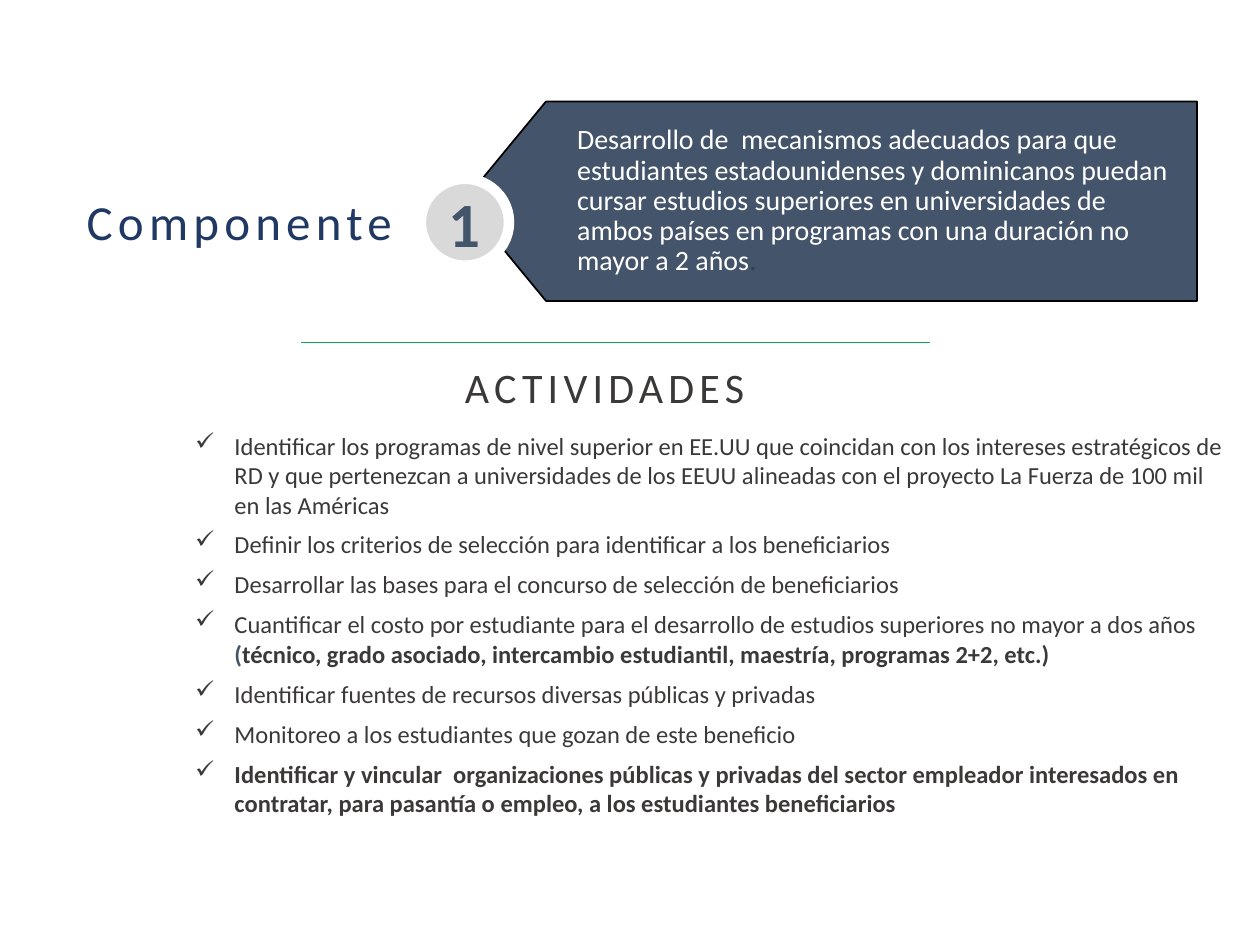
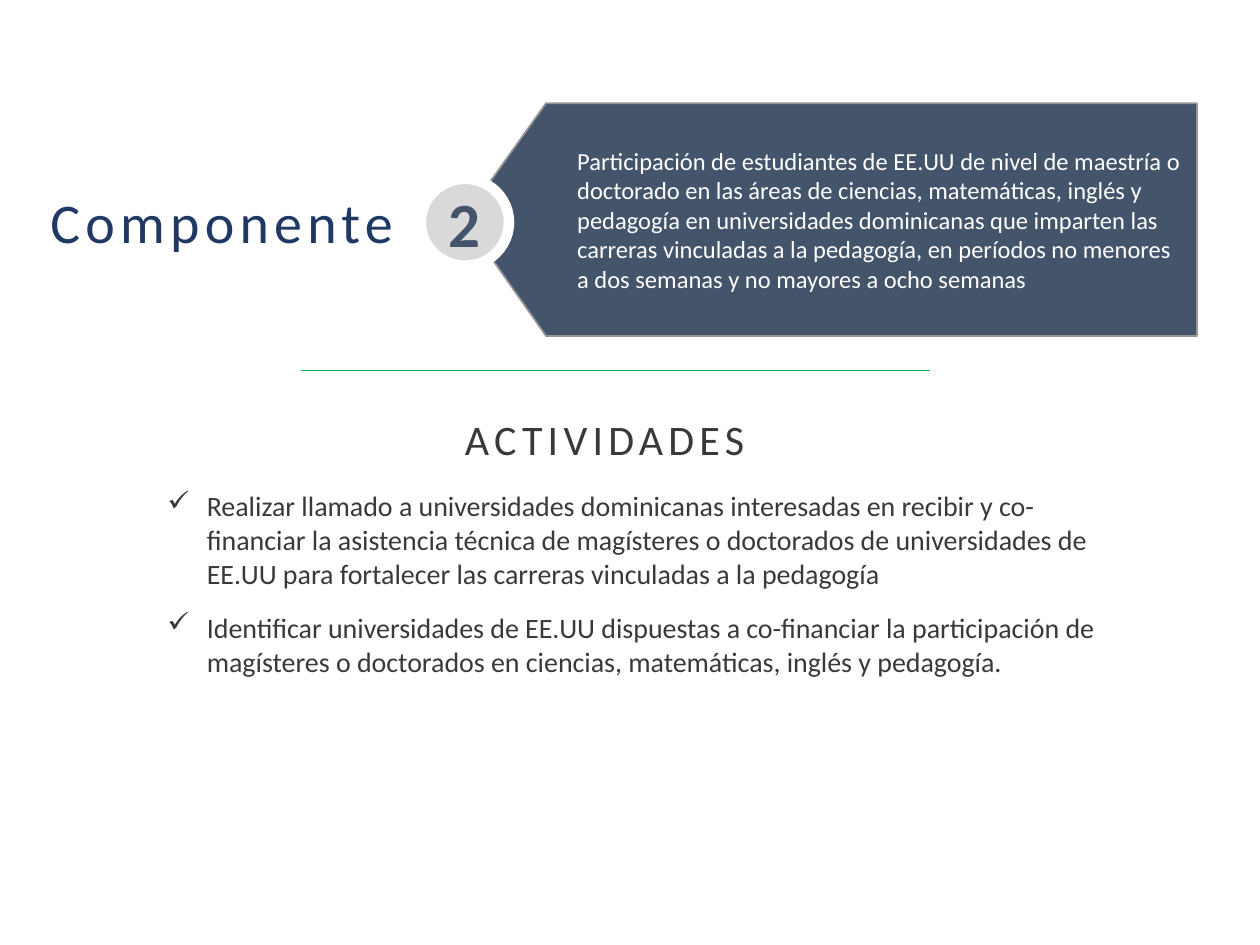
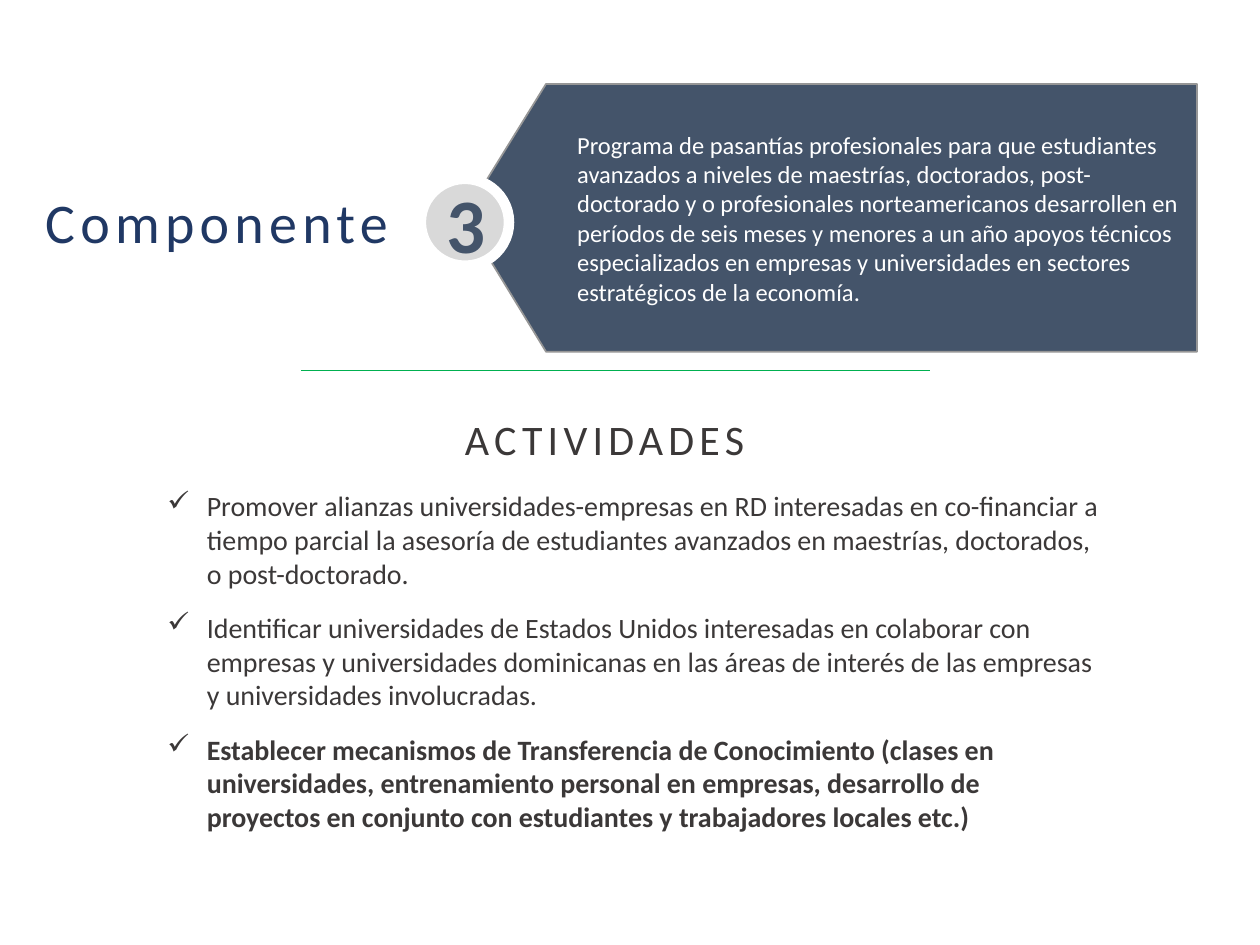
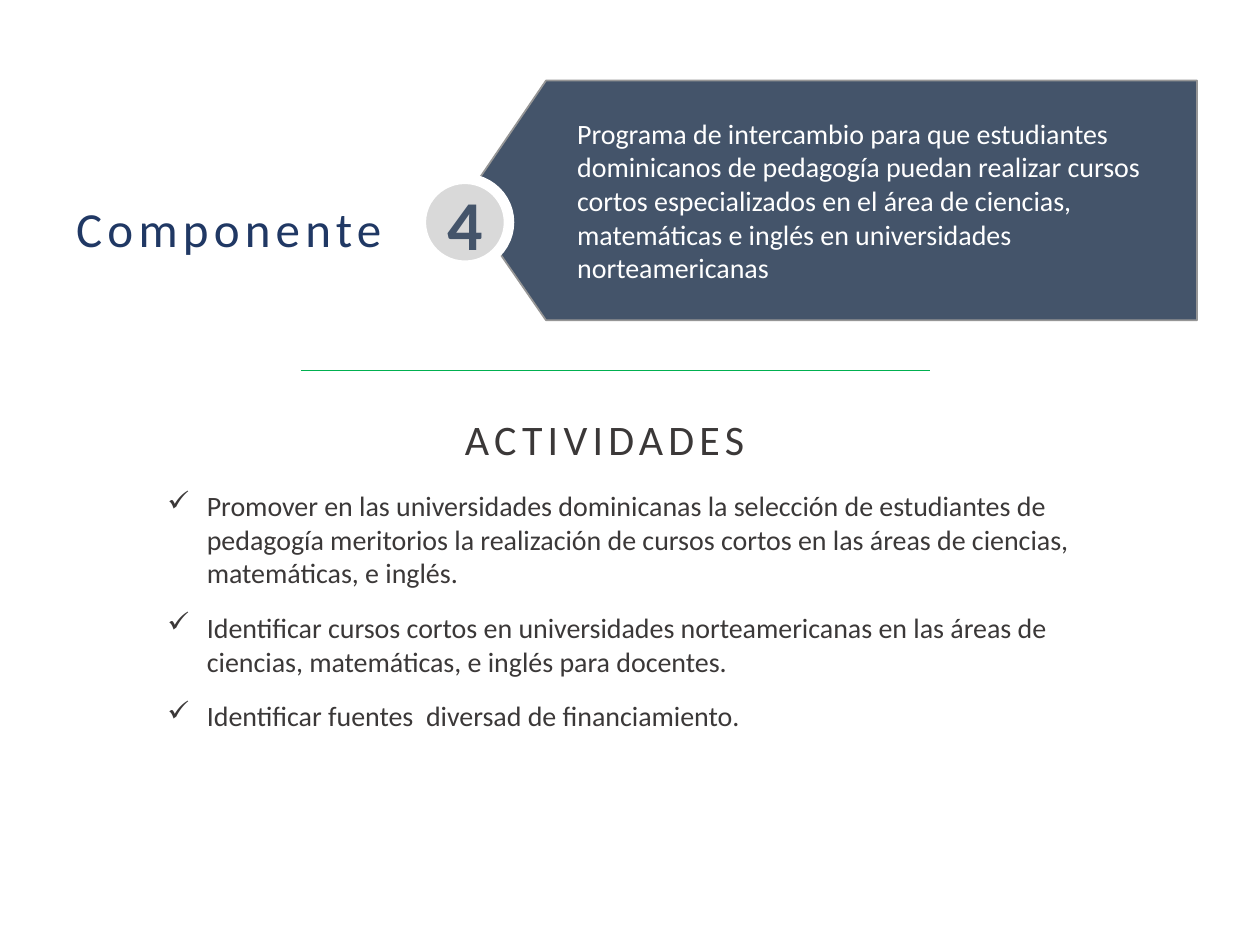
from pptx import Presentation
from pptx.dml.color import RGBColor
from pptx.enum.shapes import MSO_CONNECTOR, MSO_SHAPE
from pptx.enum.text import MSO_ANCHOR, MSO_AUTO_SIZE, PP_ALIGN
from pptx.oxml.ns import qn
from pptx.util import Pt
from lxml.etree import SubElement

NAVY = "203864"
SLATE = "44546A"
CHARCOAL = "3B3838"
WHITE = "FFFFFF"
SILVER = "969696"
GREEN = "00B050"


def color(value):
    return RGBColor.from_string(value)


def write(box, paragraphs, size, ink, bold=False, align=PP_ALIGN.LEFT, anchor=MSO_ANCHOR.MIDDLE,
          line_spacing=None, space_after=None, letter_spacing=None, bullet=None, insets=None):
    frame = box.text_frame
    frame.word_wrap = True
    frame.vertical_anchor = anchor
    if insets:
        frame.margin_left, frame.margin_top, frame.margin_right, frame.margin_bottom = map(Pt, insets)
    for index, spans in enumerate(paragraphs):
        para = frame.add_paragraph() if index else frame.paragraphs[0]
        para.alignment = align
        if line_spacing:
            para.line_spacing = line_spacing
        if space_after:
            para.space_after = Pt(space_after)
        if bullet:
            properties = para._p.get_or_add_pPr()
            properties.set("marL", str(Pt(22.5)))
            properties.set("indent", str(Pt(-22.5)))
            SubElement(properties, qn("a:buChar")).set("char", bullet)
        for text, changes in [(spans, {})] if isinstance(spans, str) else spans:
            span = para.add_run()
            span.text = text
            span.font.name = "Calibri"
            span.font.size = Pt(changes.get("size", size))
            span.font.bold = changes.get("bold", bold)
            span.font.color.rgb = color(changes.get("ink", ink))
            if letter_spacing:
                span._r.get_or_add_rPr().set("spc", str(letter_spacing * 100))


components = [
    {
        "banner": (58.3, 113.8), "banner_line": "000000", "banner_size": 16, "banner_spacing": 0.9,
        "goal": [("Desarrollo de  mecanismos adecuados para que estudiantes estadounidenses y dominicanos "
                  "puedan cursar estudios superiores en universidades de ambos países en programas con una "
                  "duración no mayor a 2 años", {}), (".", {"ink": "333F50"})],
        "number_size": 36, "title": "Componente", "title_left": -173.5, "title_size": 28,
        "rule_top": 195.8, "heading_top": 203.8,
        "list_area": (104.4, 242.6, 605.5, 247), "list_size": 14, "list_gap": 6,
        "activities": [
            "Identificar los programas de nivel superior en EE.UU que coincidan con los intereses "
            "estratégicos de RD y que pertenezcan a universidades de los EEUU alineadas con el proyecto "
            "La Fuerza de 100 mil en las Américas",
            "Definir los criterios de selección para identificar a los beneficiarios",
            "Desarrollar las bases para el concurso de selección de beneficiarios",
            [("Cuantificar el costo por estudiante para el desarrollo de estudios superiores no mayor "
              "a dos años ", {}),
             ("(", {"ink": SLATE, "bold": True}),
             ("técnico, grado asociado, intercambio estudiantil, maestría, programas 2+2, etc.)",
              {"bold": True})],
            "Identificar fuentes de recursos diversas públicas y privadas",
            "Monitoreo a los estudiantes que gozan de este beneficio",
            [("Identificar y vincular  organizaciones públicas y privadas del sector empleador "
              "interesados en contratar, para pasantía o empleo, a los estudiantes beneficiarios",
              {"bold": True})],
        ],
    },
    {
        "banner": (59, 132.5), "banner_size": 14,
        "goal": "Participación de estudiantes de EE.UU de nivel de maestría o doctorado en las áreas de "
                "ciencias, matemáticas, inglés y pedagogía en universidades dominicanas que imparten las "
                "carreras vinculadas a la pedagogía, en períodos no menores a dos semanas y no mayores a "
                "ocho semanas",
        "number_size": 36, "title": "Componente", "title_left": -183.6, "title_size": 32,
        "list_area": (88.6, 275.8, 546.5, 186.5),
        "activities": [
            "Realizar llamado a universidades dominicanas interesadas en recibir y co-financiar la "
            "asistencia técnica de magísteres o doctorados de universidades de EE.UU para fortalecer las "
            "carreras vinculadas a la pedagogía",
            "Identificar universidades de EE.UU dispuestas a co-financiar la participación de magísteres "
            "o doctorados en ciencias, matemáticas, inglés y pedagogía.",
        ],
    },
    {
        "banner": (48.2, 152.6), "banner_size": 14,
        "goal": "Programa de pasantías profesionales para que estudiantes avanzados a niveles de "
                "maestrías, doctorados, post-doctorado y o profesionales norteamericanos desarrollen en "
                "períodos de seis meses y menores a un año apoyos técnicos especializados en empresas y "
                "universidades en sectores estratégicos de la economía.",
        "number_size": 44, "title": "Componente", "title_left": -186.5, "title_size": 32,
        "list_area": (88.6, 275.8, 546.5, 288.7),
        "activities": [
            "Promover alianzas universidades-empresas en RD interesadas en co-financiar a tiempo parcial "
            "la asesoría de estudiantes avanzados en maestrías, doctorados, o post-doctorado.",
            "Identificar universidades de Estados Unidos interesadas en colaborar con empresas y "
            "universidades dominicanas en las áreas de interés de las empresas y universidades "
            "involucradas.",
            [("Establecer mecanismos de Transferencia de Conocimiento (clases en universidades, "
              "entrenamiento personal en empresas, desarrollo de proyectos en conjunto con estudiantes y "
              "trabajadores locales etc.)", {"bold": True})],
        ],
    },
    {
        "banner": (46.1, 137.2), "banner_size": 16,
        "goal": "Programa de intercambio para que estudiantes dominicanos de pedagogía puedan realizar "
                "cursos cortos especializados en el área de ciencias, matemáticas e inglés en "
                "universidades norteamericanas",
        "number_size": 40, "title": [("Componente", {}), (" ", {"size": 40})],
        "title_left": -173.5, "title_size": 28,
        "list_area": (88.6, 275.8, 546.5, 211),
        "activities": [
            "Promover en las universidades dominicanas la selección de estudiantes de pedagogía "
            "meritorios la realización de cursos cortos en las áreas de ciencias, matemáticas, e inglés.",
            "Identificar cursos cortos en universidades norteamericanas en las áreas de ciencias, "
            "matemáticas, e inglés para docentes.",
            "Identificar fuentes  diversad de financiamiento.",
        ],
    },
]

circles = [
    ((239.8, 100.8, 51.8, 49), "E1E1E1", SILVER, 1),
    ((240.5, 102.2, 50.4, 49.7), "D9D9D9", WHITE, 6),
]

deck = Presentation()
deck.slide_width, deck.slide_height = Pt(720), Pt(540)

for number, component in enumerate(components, 1):
    page = deck.slides.add_slide(deck.slide_layouts[6])
    page.background.fill.solid()
    page.background.fill.fore_color.rgb = color(WHITE)
    shapes = page.shapes

    top, height = component["banner"]
    outline = shapes.build_freeform(684, top + height, scale=Pt(1))
    outline.add_line_segments([(311.8, top + height), (265, top + height / 2), (311.8, top), (684, top)])
    banner = outline.convert_to_shape()
    banner.shadow.inherit = False
    banner.fill.solid()
    banner.fill.fore_color.rgb = color(SLATE)
    banner.line.color.rgb = color(component.get("banner_line", SILVER))
    banner.line.width = Pt(1)
    write(banner, [component["goal"]], component["banner_size"], WHITE,
          line_spacing=component.get("banner_spacing"), insets=(64.8, 4.3, 7.9, 4.3))

    for area, fill, edge, width in circles:
        circle = shapes.add_shape(MSO_SHAPE.OVAL, *map(Pt, area))
        circle.shadow.inherit = False
        circle.fill.solid()
        circle.fill.fore_color.rgb = color(fill)
        circle.line.color.rgb = color(edge)
        circle.line.width = Pt(width)
    write(circle, [str(number)], component["number_size"], SLATE, bold=True, align=PP_ALIGN.CENTER)

    activity_list = shapes.add_textbox(*map(Pt, component["list_area"]))
    write(activity_list, component["activities"], component.get("list_size", 16), CHARCOAL,
          anchor=MSO_ANCHOR.TOP, space_after=component.get("list_gap", 12), bullet="✓")
    activity_list.text_frame.auto_size = MSO_AUTO_SIZE.SHAPE_TO_FIT_TEXT

    title = shapes.add_textbox(Pt(component["title_left"]), Pt(76.3), Pt(620.6), Pt(104.4))
    write(title, [component["title"]], component["title_size"], NAVY,
          align=PP_ALIGN.CENTER, line_spacing=0.9, letter_spacing=3)

    rule_top = Pt(component.get("rule_top", 211.7))
    rule = shapes.add_connector(MSO_CONNECTOR.STRAIGHT, Pt(172), rule_top, Pt(531.4), rule_top)
    rule.line.color.rgb = color(GREEN)
    rule.line.width = Pt(0.5)
    SubElement(rule._element.spPr, qn("a:effectLst"))

    heading = shapes.add_textbox(Pt(159.8), Pt(component.get("heading_top", 233.3)), Pt(371.5), Pt(38.2))
    write(heading, ["ACTIVIDADES"], 24, CHARCOAL,
          align=PP_ALIGN.CENTER, line_spacing=0.9, letter_spacing=3)

deck.save("out.pptx")
